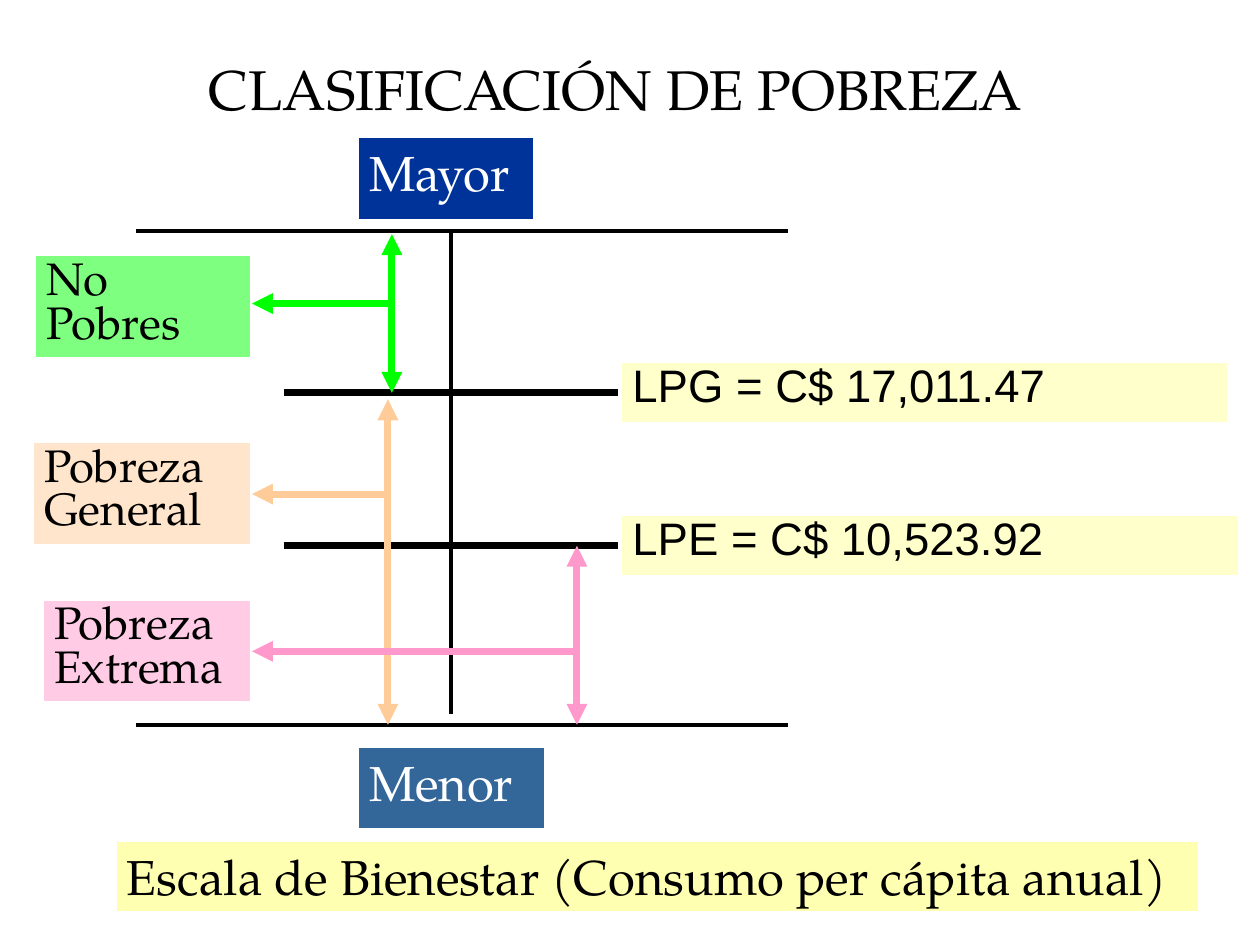
from dataclasses import dataclass

from lxml.etree import SubElement
from pptx import Presentation
from pptx.dml.color import RGBColor
from pptx.enum.shapes import MSO_CONNECTOR, MSO_SHAPE
from pptx.enum.text import MSO_ANCHOR, PP_ALIGN
from pptx.oxml.ns import qn
from pptx.util import Cm, Pt

STRAIGHT = MSO_CONNECTOR.STRAIGHT
RECTANGLE = MSO_SHAPE.RECTANGLE
TOP, MIDDLE = MSO_ANCHOR.TOP, MSO_ANCHOR.MIDDLE
LEFT, CENTER = PP_ALIGN.LEFT, PP_ALIGN.CENTER


@dataclass(frozen=True)
class Theme:
    serif: str = "TeX Gyre Pagella"
    sans: str = "Arial"
    title_size: int = 32
    scale_size: int = 28
    label_size: int = 26
    black: str = "000000"
    white: str = "FFFFFF"
    higher: str = "003399"
    lower: str = "336699"
    caption: str = "FFFF66"
    threshold: str = "FFFF99"
    not_poor: str = "00FF00"
    general: str = "FFCC99"
    extreme: str = "FF99CC"
    thin: float = 2.25
    thick: float = 4


theme = Theme()
presentation = Presentation()
presentation.slide_width = Cm(25.4)
presentation.slide_height = Cm(19.05)
slide = presentation.slides.add_slide(presentation.slide_layouts[6])


def add_text(text, left, top, width, height, *, size, font=theme.serif,
             color=theme.black, fill=None, translucent=False, line_spacing=None,
             space_before=True, align=LEFT, anchor=TOP):
    """Add a rectangle with text; translucent makes its fill half transparent."""
    shape = slide.shapes.add_shape(RECTANGLE, Cm(left), Cm(top), Cm(width), Cm(height))
    shape.shadow.inherit = False
    if fill:
        shape.fill.solid()
        shape.fill.fore_color.rgb = RGBColor.from_string(fill)
        shape.line.color.rgb = RGBColor.from_string(theme.white)
        shape.line.width = Pt(theme.thin)
    else:
        shape.fill.background()
        shape.line.fill.background()
    if translucent:
        fill_color = shape._element.spPr.find(qn("a:solidFill"))[0]
        SubElement(fill_color, qn("a:alpha"), val="50000")
    frame = shape.text_frame
    frame.word_wrap = True
    frame.vertical_anchor = anchor
    paragraph = frame.paragraphs[0]
    paragraph.alignment = align
    if line_spacing:
        paragraph.line_spacing = line_spacing
    if space_before:
        spacing = SubElement(paragraph._p.get_or_add_pPr(), qn("a:spcBef"))
        SubElement(spacing, qn("a:spcPct"), val="20000")
    run = paragraph.add_run()
    run.text = text
    run.font.name = font
    run.font.size = Pt(size)
    run.font.color.rgb = RGBColor.from_string(color)


def add_line(x1, y1, x2, y2, *, color=theme.black, width=theme.thin, arrows=()):
    """Add a line; arrows lists the ends ("headEnd", "tailEnd") that get a triangle."""
    connector = slide.shapes.add_connector(STRAIGHT, Cm(x1), Cm(y1), Cm(x2), Cm(y2))
    connector.line.color.rgb = RGBColor.from_string(color)
    connector.line.width = Pt(width)
    for end in arrows:
        SubElement(connector.line._get_or_add_ln(), qn(f"a:{end}"), type="triangle")
    SubElement(connector._element.spPr, qn("a:effectLst"))


add_text("CLASIFICACIÓN DE POBREZA", 2.74, 1.12, 19.35, 1.5, size=theme.title_size,
         line_spacing=0.9, space_before=False, align=CENTER, anchor=MIDDLE)

# Welfare scale: upper and lower limits joined by the axis
scale_top, scale_bottom = 4.65, 14.61
for y in (scale_top, scale_bottom):
    add_line(2.74, y, 15.88, y)
add_line(9.09, scale_top, 9.09, 14.4)

for text, top, width, fill in (
    ("Mayor", 2.75, 3.6, theme.higher),
    ("Menor", 15.04, 3.81, theme.lower),
):
    add_text(text, 7.19, top, width, 1.7, size=theme.scale_size,
             color=theme.white, fill=fill)
add_text("Escala de Bienestar (Consumo per cápita anual)", 2.31, 16.94, 21.89, 1.47,
         size=theme.scale_size, fill=theme.caption, translucent=True)

# Poverty lines, each label centred on its line
general_line, extreme_line = 7.92, 11
label_left, label_height = 12.5, 1.27
for text, y, width in (
    ("LPG = C$ 17,011.47", general_line, 12.27),
    ("LPE = C$ 10,523.92", extreme_line, 12.5),
):
    add_line(5.72, y, label_left, y, width=theme.thick)
    add_text(text, label_left, y - label_height / 2, width, label_height,
             size=theme.label_size, font=theme.sans, fill=theme.threshold,
             translucent=True, line_spacing=0.8)

# Population groups: label, range arrow and the branch from label to range
group_right = 5.08
for text, color, left, top, range_x, range_top, range_bottom, branch_y in (
    ("Pobreza General", theme.general, 0.64, 8.89, 7.82, 8.05, scale_bottom, 9.96),
    ("Pobreza Extrema", theme.extreme, 0.84, 12.07, 11.63, extreme_line, scale_bottom, 13.13),
    ("No Pobres", theme.not_poor, 0.69, 5.13, 7.9, 4.72, general_line, 6.12),
):
    add_text(text, left, top, group_right - left, 2.11, size=theme.label_size,
             fill=color, translucent=True, line_spacing=0.8)
    add_line(range_x, range_top, range_x, range_bottom, color=color,
             width=theme.thick, arrows=("headEnd", "tailEnd"))
    add_line(group_right, branch_y, range_x, branch_y, color=color,
             width=theme.thick, arrows=("headEnd",))

presentation.save("out.pptx")
